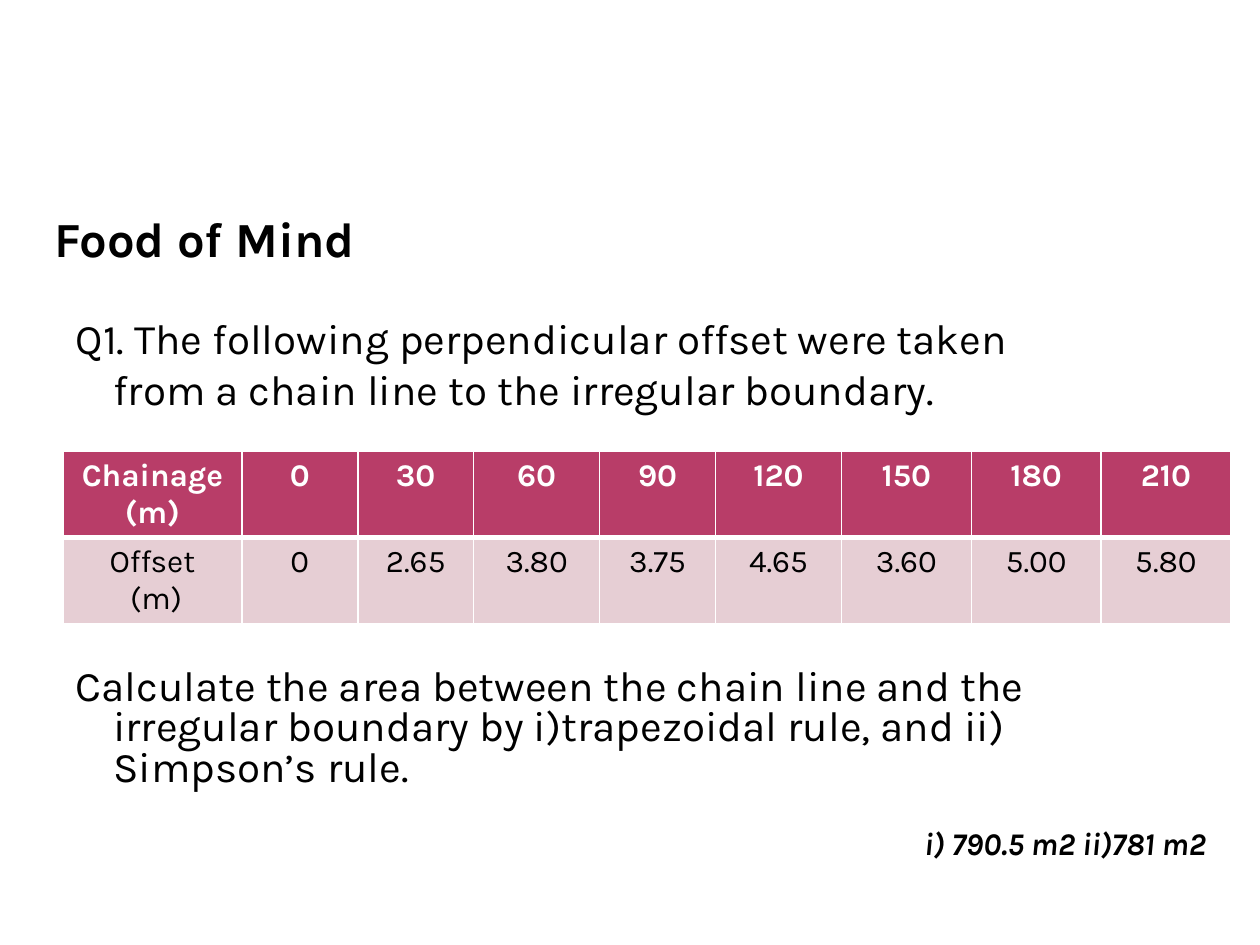
from lxml import etree
from pptx import Presentation
from pptx.dml.color import RGBColor
from pptx.enum.text import MSO_ANCHOR, MSO_AUTO_SIZE, PP_ALIGN
from pptx.oxml.ns import qn
from pptx.util import Inches, Pt

LEFT, MID, RIGHT = PP_ALIGN.LEFT, PP_ALIGN.CENTER, PP_ALIGN.RIGHT
TOP, CENTRE = MSO_ANCHOR.TOP, MSO_ANCHOR.MIDDLE
FIXED = MSO_AUTO_SIZE.NONE

BLACK = RGBColor(0x00, 0x00, 0x00)
WHITE = RGBColor(0xFF, 0xFF, 0xFF)
ROSE = RGBColor(0xB8, 0x3D, 0x68)
BLUSH = RGBColor(0xE6, 0xCE, 0xD4)

FONT = "Karla"
EDGE = 0.5
HANG = 0.3
COLS = [1.42, 0.92, 0.92, 1, 0.92, 1, 1.03, 1.03, 1.03]
ROW = 0.67
CHAIN = ["Chainage (m)"] + [str(30 * i) for i in range(8)]
OFFSET = ["Offset\n (m)", "0", "2.65", "3.80", "3.75", "4.65", "3.60", "5.00", "5.80"]


def write(frame, text, size=18, color=BLACK, bold=False, italic=False,
          align=LEFT, hang=0, before=0, line=1.0):
    """Fill a frame, one paragraph for each line of text."""
    frame.text = text
    for para in frame.paragraphs:
        props = para._p.get_or_add_pPr()
        props.set("marL", str(Inches(hang)))
        props.set("indent", str(-Inches(hang)))
        etree.SubElement(props, qn("a:buNone"))
        para.alignment = align
        para.space_before = Pt(before)
        para.line_spacing = line
        for run in para.runs:
            font = run.font
            font.name, font.size = FONT, Pt(size)
            font.bold, font.italic = bold, italic
            font.color.rgb = color


def place(shape, left, top, width, height, anchor=TOP):
    """Move a text shape and return its frame."""
    shape.left, shape.top = Inches(left), Inches(top)
    shape.width, shape.height = Inches(width), Inches(height)
    frame = shape.text_frame
    frame.word_wrap = True
    frame.auto_size = FIXED
    frame.vertical_anchor = anchor
    return frame


def add_text(slide, *box):
    return place(slide.shapes.add_textbox(0, 0, 0, 0), *box)


def rule(cell, **widths):
    """Draw white cell borders, before the cell gets its fill."""
    props = cell._tc.get_or_add_tcPr()
    for side, width in widths.items():
        edge = etree.SubElement(props, qn("a:ln" + side), w=str(Pt(width)))
        fill = etree.SubElement(edge, qn("a:solidFill"))
        etree.SubElement(fill, qn("a:srgbClr"), val=str(WHITE))


def add_grid(slide, left, top):
    rows = [(CHAIN, ROSE, WHITE, True, {"L": 1, "R": 1, "T": 1, "B": 3}),
            (OFFSET, BLUSH, BLACK, False, {"L": 1, "R": 1, "B": 1})]
    grid = slide.shapes.add_table(
        len(rows), len(COLS), Inches(left), Inches(top),
        Inches(sum(COLS)), Inches(ROW * len(rows))).table
    for col, width in zip(grid.columns, COLS):
        col.width = Inches(width)
    for r, (words, fill, ink, bold, edges) in enumerate(rows):
        for c, word in enumerate(words):
            cell = grid.cell(r, c)
            rule(cell, **edges)
            cell.fill.solid()
            cell.fill.fore_color.rgb = fill
            write(cell.text_frame, word, color=ink, bold=bold, align=MID)


def main():
    deck = Presentation()
    deck.slide_width, deck.slide_height = Inches(10), Inches(7.5)
    slide = deck.slides.add_slide(deck.slide_layouts[1])
    title, body = slide.placeholders

    # Heading and question
    write(place(title, 0.33, 1.6, 6.33, 0.57, CENTRE), "Food of Mind",
          size=28, bold=True)
    write(place(body, EDGE, 2.43, 7.92, 1.16),
          "Q1. The following perpendicular offset were taken from a chain "
          "line to the irregular boundary.",
          size=24.1, hang=HANG, before=6)

    # Measurements
    add_grid(slide, EDGE, 3.58)

    # Task and answer
    write(add_text(slide, EDGE, 5.26, 7.92, 1.16),
          "Calculate the area between the chain line and the irregular "
          "boundary by i)trapezoidal rule, and ii) Simpson’s rule.",
          size=24.1, hang=HANG, line=0.8)
    write(add_text(slide, 6.67, 6.49, 3, 0.4), "i) 790.5 m2 ii)781 m2",
          bold=True, italic=True, align=RIGHT)

    deck.save("out.pptx")


if __name__ == "__main__":
    main()
